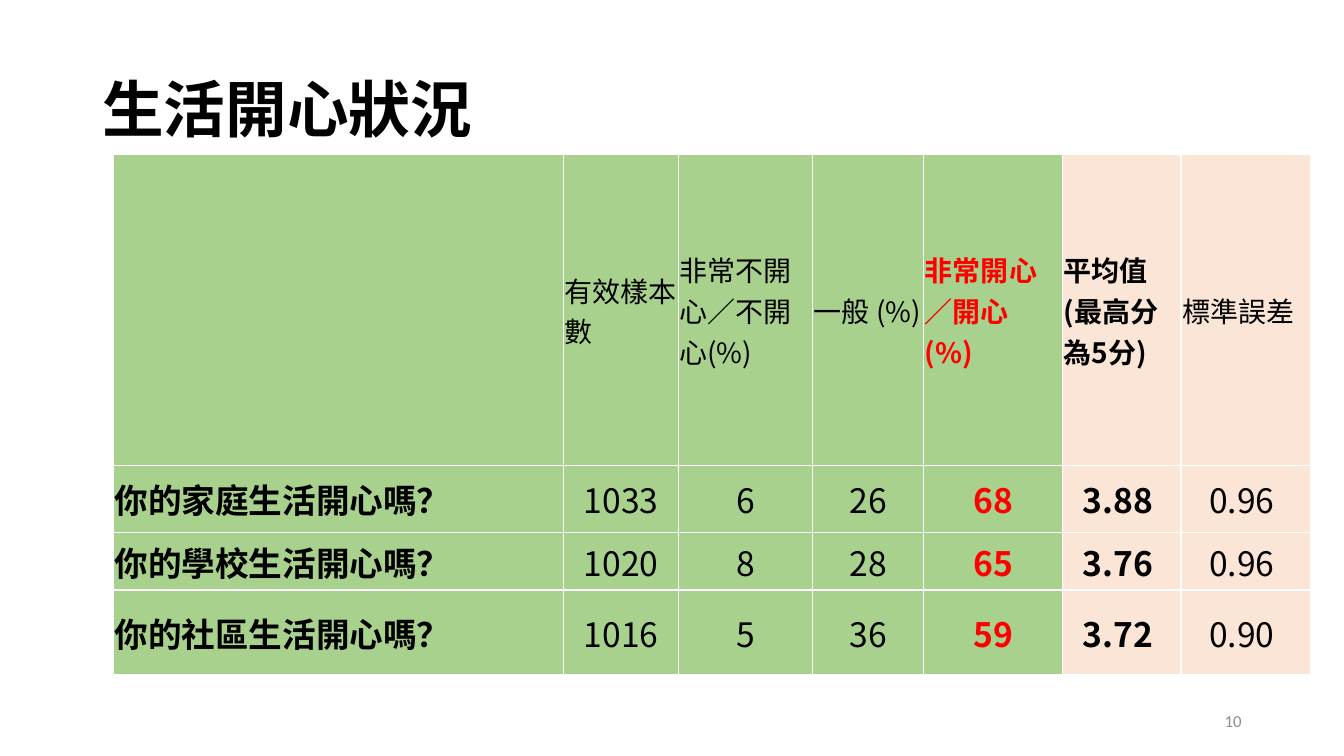
from dataclasses import dataclass

from lxml import etree
from pptx import Presentation
from pptx import util as u
from pptx.dml.color import RGBColor
from pptx.enum import text
from pptx.oxml.ns import qn


@dataclass(frozen=True)
class Theme:
    cjk: str = "Noto Sans CJK SC"
    latin: str = "Calibri"
    black: str = "000000"
    red: str = "FF0000"
    gray: str = "8C8C8C"
    white: str = "FFFFFF"
    green: str = "A9D18E"
    peach: str = "FBE5D6"
    title: int = 44
    question: int = 24
    header: int = 20
    number: int = 12


THEME = Theme()
COLUMN_WIDTHS = [429, 109, 128, 106, 132, 113, 123]
ROW_HEIGHTS = [296, 64, 55, 81]
BOLD_COLUMNS = {0, 4, 5}
RED_COLUMN = 4
FIRST_PEACH_COLUMN = 5
ROWS = [
    ["", "有效樣本數", "非常不開心／不開心(%)", "一般 (%)",
     "非常開心／開心 (%)", "平均值 (最高分為5分)", "標準誤差"],
    ["你的家庭生活開心嗎？", "1033", "6", "26", "68", "3.88 ", "0.96 "],
    ["你的學校生活開心嗎？", "1020", "8", "28", "65", "3.76 ", "0.96 "],
    ["你的社區生活開心嗎？", "1016", "5", "36", "59", "3.72 ", "0.90 "],
]


def px(count):
    return u.Emu(count * 9525)


def apply(target, values):
    for name, value in values.items():
        setattr(target, name, value)


def write(frame, words, size, color, bold=False, font=THEME.cjk, **paragraph):
    para = frame.paragraphs[0]
    apply(para, paragraph)
    span = para.add_run()
    span.text = words
    apply(span.font, {"name": font, "size": u.Pt(size), "bold": bold})
    span.font.color.rgb = RGBColor.from_string(color)
    properties = span.font._element
    etree.SubElement(properties, qn("a:ea")).set("typeface", font)


def add_label(page, place, words, size, color, **style):
    box = page.shapes.add_textbox(*map(px, place))
    apply(box.text_frame, {"word_wrap": True,
                           "vertical_anchor": text.MSO_ANCHOR.MIDDLE})
    write(box.text_frame, words, size, color, **style)


def add_borders(cell):
    """Draw a thin white line on all four sides of a cell."""
    properties = cell._tc.get_or_add_tcPr()
    for index, side in enumerate(("lnL", "lnR", "lnT", "lnB")):
        line = etree.Element(qn(f"a:{side}"), w=str(u.Pt(1)))
        fill = etree.SubElement(line, qn("a:solidFill"))
        etree.SubElement(fill, qn("a:srgbClr")).set("val", THEME.white)
        properties.insert(index, line)


def fill_cell(cell, row, column, words):
    apply(cell, {"margin_left": px(1), "margin_right": px(1),
                 "margin_top": px(1), "margin_bottom": 0,
                 "vertical_anchor": text.MSO_ANCHOR.MIDDLE})
    cell.fill.solid()
    shade = THEME.green if column < FIRST_PEACH_COLUMN else THEME.peach
    cell.fill.fore_color.rgb = RGBColor.from_string(shade)
    add_borders(cell)
    if not words:
        return
    is_header = row == 0
    if is_header:
        cell._tc.get_or_add_tcPr().set("vert", "eaVert")
    centered = not is_header and column > 0
    write(cell.text_frame, words,
          THEME.header if is_header else THEME.question,
          THEME.red if column == RED_COLUMN else THEME.black,
          bold=column in BOLD_COLUMNS,
          alignment=text.PP_ALIGN.CENTER if centered else text.PP_ALIGN.LEFT)


def add_happiness_table(page, left, top):
    frame = page.shapes.add_table(
        len(ROW_HEIGHTS), len(COLUMN_WIDTHS), px(left), px(top),
        px(sum(COLUMN_WIDTHS)), px(sum(ROW_HEIGHTS)))
    table = frame.table
    apply(table, {"first_row": False, "horz_banding": False})
    for column, width in zip(table.columns, COLUMN_WIDTHS):
        column.width = px(width)
    for row, height in zip(table.rows, ROW_HEIGHTS):
        row.height = px(height)
    for row, entries in enumerate(ROWS):
        for column, words in enumerate(entries):
            fill_cell(table.cell(row, column), row, column, words)


def main():
    deck = Presentation()
    apply(deck, {"slide_width": px(1280), "slide_height": px(720)})
    page = deck.slides.add_slide(deck.slide_layouts[6])
    add_label(page, (88, 38, 1104, 139), "生活開心狀況", THEME.title,
              THEME.black, bold=True, line_spacing=0.9)
    add_happiness_table(page, 108, 147)
    add_label(page, (904, 667, 288, 38), "10", THEME.number, THEME.gray,
              font=THEME.latin, alignment=text.PP_ALIGN.RIGHT)
    deck.save("out.pptx")


if __name__ == "__main__":
    main()
